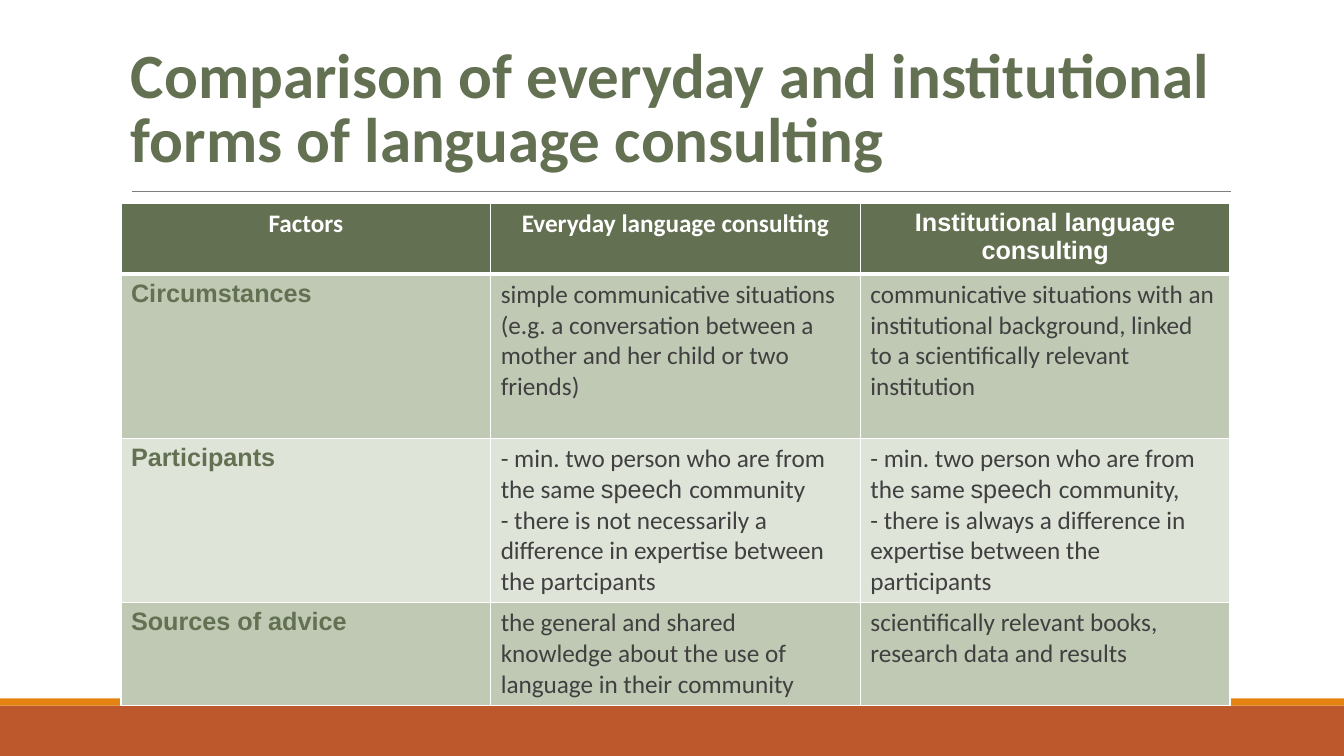
"""Build a slide comparing everyday and institutional language consulting."""
from lxml.etree import SubElement
from pptx import Presentation
from pptx.dml.color import RGBColor
from pptx.enum.shapes import MSO_CONNECTOR, MSO_SHAPE
from pptx.enum.text import MSO_ANCHOR, PP_ALIGN
from pptx.oxml.ns import qn
from pptx.util import Inches, Pt

GREEN = RGBColor(0x63, 0x70, 0x52)
BAND_DARK = RGBColor(0xC0, 0xC9, 0xB4)
BAND_LIGHT = RGBColor(0xDF, 0xE4, 0xD9)
RUST = RGBColor(0xBD, 0x58, 0x2C)
ORANGE = RGBColor(0xE4, 0x83, 0x12)
GREY = RGBColor(0x7F, 0x7F, 0x7F)
DARK = RGBColor(0x40, 0x40, 0x40)
WHITE = RGBColor(0xFF, 0xFF, 0xFF)


def add_text(p, text, font="Calibri", size=18, color=DARK, bold=False):
    for i, line in enumerate(text.split("\n")):
        if i:
            p.add_line_break()
        r = p.add_run()
        r.text = line
        r.font.name = font
        r.font.size = Pt(size)
        r.font.color.rgb = color
        r.font.bold = bold


def add_borders(cell, bottom):
    tcPr = cell._tc.get_or_add_tcPr()
    for side, width in (("L", 1), ("R", 1), ("T", 1), ("B", bottom)):
        ln = SubElement(tcPr, qn(f"a:ln{side}"), w=str(Pt(width)))
        fill = SubElement(ln, qn("a:solidFill"))
        SubElement(fill, qn("a:srgbClr"), val=str(WHITE))


prs = Presentation()
prs.slide_width = Inches(13.33)
prs.slide_height = Inches(7.5)
s = prs.slides.add_slide(prs.slide_layouts[6])

for top, height, color in ((7, 0.5, RUST), (6.93, 0.07, ORANGE)):
    sp = s.shapes.add_shape(MSO_SHAPE.RECTANGLE, 0, Inches(top),
                            prs.slide_width, Inches(height))
    sp.shadow.inherit = False
    sp.fill.solid()
    sp.fill.fore_color.rgb = color
    sp.line.fill.background()

rule = s.shapes.add_connector(MSO_CONNECTOR.STRAIGHT, Inches(1.31), Inches(1.9),
                              Inches(12.21), Inches(1.9))
rule.line.color.rgb = GREY
rule.line.width = Pt(0.75)
SubElement(rule._element.spPr, qn("a:effectLst"))

title = s.shapes.add_textbox(Inches(1.2), Inches(0.31), Inches(11), Inches(1.59))
tf = title.text_frame
tf.word_wrap = True
tf.vertical_anchor = MSO_ANCHOR.MIDDLE
p = tf.paragraphs[0]
p.line_spacing = 0.85
add_text(p, "Comparison of everyday and institutional forms of language consulting",
         size=45, color=GREEN, bold=True)

SAME = ("- min. two person who are from the same ", "Calibri")
SPEECH = ("speech ", "Arial")
rows = [
    (0.65, GREEN, [
        [("Factors", "Calibri")],
        [("Everyday language consulting", "Calibri")],
        [("Institutional language consulting", "Arial")]]),
    (1.63, BAND_DARK, [
        [("Circumstances", "Arial")],
        [("simple communicative situations (e.g. a conversation between a "
          "mother and her child or two friends)", "Calibri")],
        [("communicative situations with an institutional background, linked "
          "to a scientifically relevant institution", "Calibri")]]),
    (1.63, BAND_LIGHT, [
        [("Participants", "Arial")],
        [SAME, SPEECH,
         ("community \n- there is not necessarily a difference in expertise "
          "between the partcipants", "Calibri")],
        [SAME, SPEECH,
         ("community,\n- there is always a difference in expertise between "
          "the participants", "Calibri")]]),
    (1.02, BAND_DARK, [
        [("Sources of advice", "Arial")],
        [("the general and shared knowledge about the use of language in "
          "their community", "Calibri")],
        [("scientifically relevant books, research data and results", "Calibri")]]),
]

table = s.shapes.add_table(len(rows), 3, Inches(1.2), Inches(2.02),
                           Inches(11), Inches(4.93)).table
for i, (height, fill, cells) in enumerate(rows):
    table.rows[i].height = Inches(height)
    for j, runs in enumerate(cells):
        cell = table.cell(i, j)
        header = i == 0
        add_borders(cell, 3 if header else 1)
        cell.fill.solid()
        cell.fill.fore_color.rgb = fill
        p = cell.text_frame.paragraphs[0]
        p.alignment = PP_ALIGN.CENTER if header else PP_ALIGN.LEFT
        color = WHITE if header else GREEN if j == 0 else DARK
        for text, font in runs:
            add_text(p, text, font=font, color=color, bold=header or j == 0)

prs.save("out.pptx")
